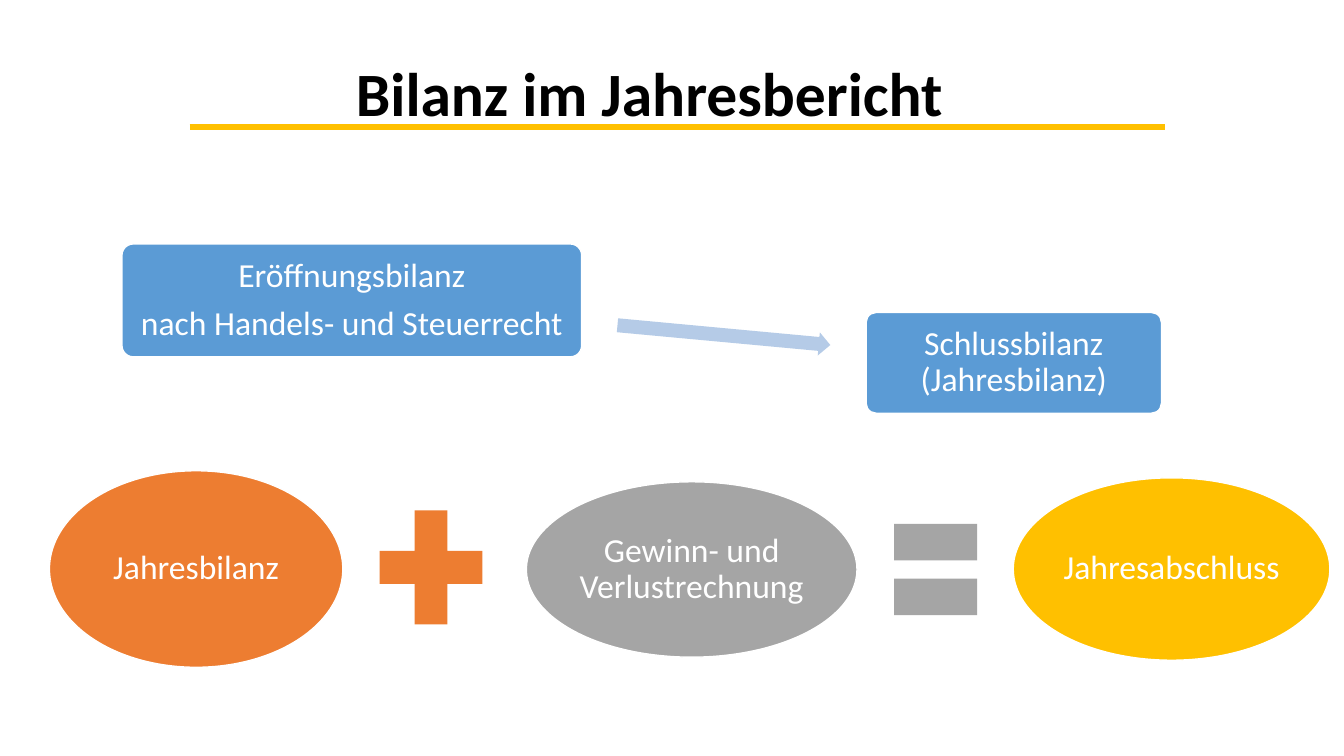
from dataclasses import dataclass
from lxml.etree import SubElement
from pptx import Presentation
from pptx.dml.color import RGBColor as Rgb
from pptx.enum.shapes import MSO_CONNECTOR as Link, MSO_SHAPE as Kind
from pptx.enum.text import MSO_ANCHOR as Anchor, MSO_AUTO_SIZE as Fit, PP_ALIGN as Align
from pptx.oxml.ns import qn
from pptx.util import Inches, Pt


@dataclass(frozen=True)
class Theme:
    font: str = "Calibri"
    head: int = 44
    body: int = 24
    black: str = "000000"
    white: str = "FFFFFF"
    blue: str = "5B9BD5"
    pale: str = "B5CBE7"
    orange: str = "ED7D31"
    gray: str = "A5A5A5"
    gold: str = "FFC000"


theme = Theme()


def style(para, size, color, bold=False):
    font = para.font
    font.name = theme.font
    font.size = Pt(size)
    font.bold = bold
    font.color.rgb = Rgb.from_string(color)


def add_title(slide, text, box):
    title = slide.shapes.title
    title.left, title.top, title.width, title.height = map(Inches, box)
    frame = title.text_frame
    frame.text = text
    frame.auto_size = Fit.NONE
    frame.vertical_anchor = Anchor.MIDDLE
    para = frame.paragraphs[0]
    para.alignment = Align.LEFT
    style(para, theme.head, theme.black, True)


def add_rule(slide, left, right, top):
    rule = slide.shapes.add_connector(
        Link.STRAIGHT, Inches(left), Inches(top), Inches(right), Inches(top))
    rule.line.color.rgb = Rgb.from_string(theme.gold)
    rule.line.width = Pt(4.5)
    SubElement(rule._element.spPr, qn("a:effectLst"))


def add_shape(slide, kind, box, color):
    shape = slide.shapes.add_shape(kind, *map(Inches, box))
    shape.shadow.inherit = False
    shape.fill.solid()
    shape.fill.fore_color.rgb = Rgb.from_string(color)
    shape.line.fill.background()
    return shape


def add_label(slide, kind, box, color, lines, inset):
    shape = add_shape(slide, kind, box, color)
    shape.line.color.rgb = Rgb.from_string(theme.white)
    shape.line.width = Pt(1)
    frame = shape.text_frame
    frame.word_wrap = True
    frame.vertical_anchor = Anchor.MIDDLE
    frame.margin_left = frame.margin_right = Inches(inset)
    frame.margin_top = frame.margin_bottom = Inches(inset)
    frame.text = "\n".join(lines)
    for para in frame.paragraphs:
        para.alignment = Align.CENTER
        para.line_spacing = 0.9
        style(para, theme.body, theme.white)
    for para in frame.paragraphs[:-1]:
        para.space_after = Pt(0.35 * theme.body)
    return shape


def add_card(slide, box, *lines):
    card = add_label(slide, Kind.ROUNDED_RECTANGLE, box, theme.blue, lines, 0.1)
    card.adjustments[0] = 0.1


def add_oval(slide, box, color, text):
    add_label(slide, Kind.OVAL, box, color, [text], 0.03)


def add_arrow(slide, box, angle):
    arrow = add_shape(slide, Kind.RIGHT_ARROW, box, theme.pale)
    arrow.adjustments[0] = 0.6
    arrow.rotation = angle


def main():
    deck = Presentation()
    deck.slide_width, deck.slide_height = Inches(13.33), Inches(7.5)
    slide = deck.slides.add_slide(deck.slide_layouts[5])

    add_title(slide, "Bilanz im Jahresbericht", (3.43, 0.49, 6.82, 0.84))
    add_rule(slide, 1.88, 11.55, 1.26)

    add_card(slide, (1.21, 2.42, 4.56, 1.12),
             "Eröffnungsbilanz", "nach Handels- und Steuerrecht")
    add_arrow(slide, (6.12, 3.21, 2.12, 0.23), 5.3)
    add_card(slide, (8.59, 3.1, 2.93, 1), "Schlussbilanz (Jahresbilanz)")

    add_oval(slide, (0.49, 4.67, 2.91, 1.95), theme.orange, "Jahresbilanz")
    add_shape(slide, Kind.MATH_PLUS, (3.58, 4.86, 1.39, 1.54), theme.orange)
    add_oval(slide, (5.22, 4.78, 3.28, 1.74), theme.gray, "Gewinn- und Verlustrechnung")
    add_shape(slide, Kind.MATH_EQUAL, (8.72, 4.88, 1.12, 1.54), theme.gray)
    add_oval(slide, (10.05, 4.74, 3.14, 1.81), theme.gold, "Jahresabschluss")

    deck.save("out.pptx")


if __name__ == "__main__":
    main()
